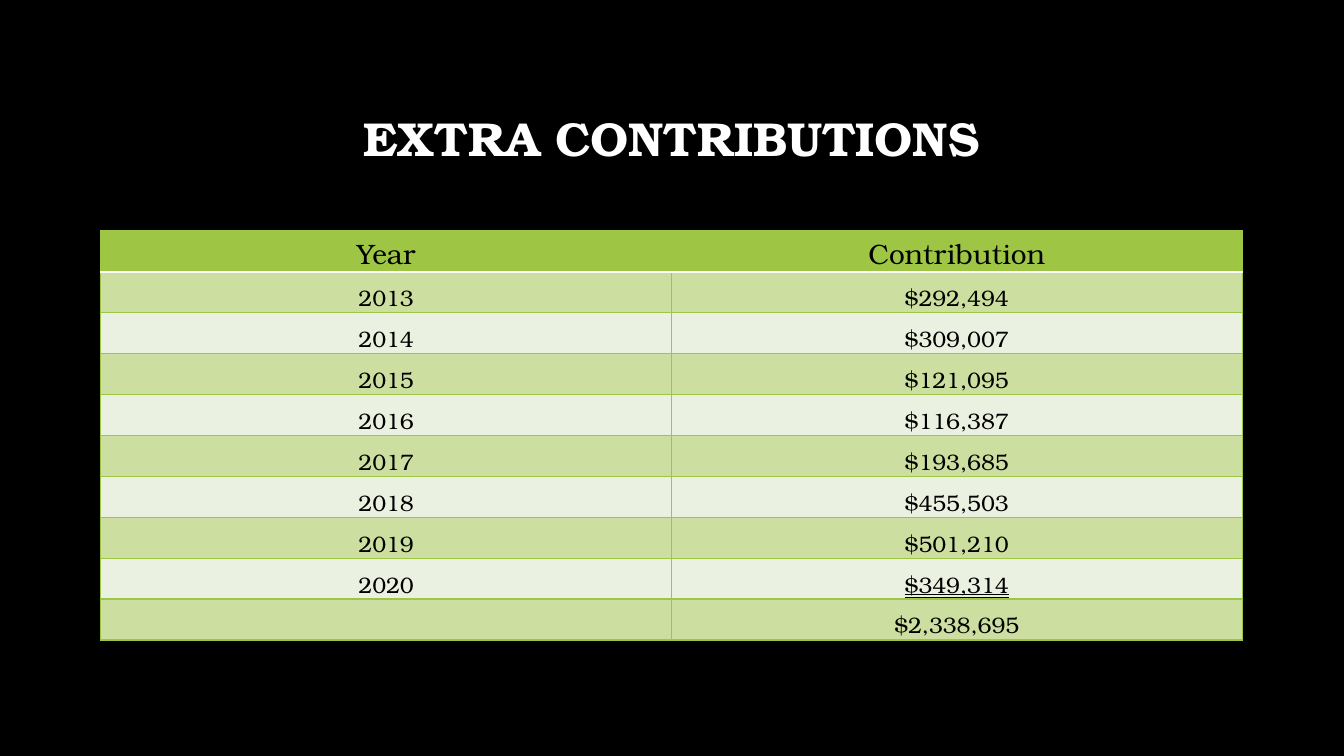
from dataclasses import dataclass

from lxml.etree import SubElement
from pptx import Presentation
from pptx.dml.color import RGBColor
from pptx.enum.text import MSO_ANCHOR as Anchor
from pptx.enum.text import MSO_AUTO_SIZE as AutoSize
from pptx.enum.text import MSO_UNDERLINE as Underline
from pptx.enum.text import PP_ALIGN as Align
from pptx.oxml.ns import qn
from pptx.util import Inches, Pt


@dataclass(frozen=True)
class Theme:
    font: str = "TeX Gyre Bonum"
    background: str = "000000"
    title: str = "FFFFFF"
    text: str = "000000"
    green: str = "9EC544"
    dark_band: str = "CCDFA0"
    light_band: str = "EBF1E0"
    header_rule: str = "FFFFFF"
    title_size: int = 34
    header_size: int = 20
    body_size: int = 16


THEME = Theme()
LEFT, WIDTH = 1, 11.32
ROW_HEIGHT = 0.406
ROWS = [
    ("Year", "Contribution"),
    ("2013", "$292,494"),
    ("2014", "$309,007"),
    ("2015", "$121,095"),
    ("2016", "$116,387"),
    ("2017", "$193,685"),
    ("2018", "$455,503"),
    ("2019", "$501,210"),
    ("2020", "$349,314"),
    ("", "$2,338,695"),
]
LAST_YEAR_ROW = len(ROWS) - 2


def format_text(frame, size, color, bold=False):
    """Centre the paragraphs and style their runs."""
    for para in frame.paragraphs:
        para.alignment = Align.CENTER
        for span in para.runs:
            span.font.name = THEME.font
            span.font.size = Pt(size)
            span.font.bold = bold
            span.font.color.rgb = RGBColor.from_string(color)


def add_title(page, text):
    box = page.shapes.title
    box.left, box.top = Inches(LEFT), Inches(0.67)
    box.width, box.height = Inches(WIDTH), Inches(1.45)
    frame = box.text_frame
    frame.text = text
    frame.auto_size = AutoSize.NONE
    frame.vertical_anchor = Anchor.MIDDLE
    frame.paragraphs[0].line_spacing = 0.9
    format_text(frame, THEME.title_size, THEME.title, bold=True)


def set_border(cell, side, color, points):
    properties = cell._tc.get_or_add_tcPr()
    line = SubElement(properties, qn(f"a:ln{side}"), w=str(Pt(points)))
    fill = SubElement(line, qn("a:solidFill"))
    SubElement(fill, qn("a:srgbClr"), val=color)


def format_cell(cell, text, row):
    # Borders come before the fill in the cell properties
    for side in "LRTB":
        under_header = (row, side) in ((0, "B"), (1, "T"))
        if under_header:
            set_border(cell, side, THEME.header_rule, 1.5)
        else:
            set_border(cell, side, THEME.green, 1)

    band = THEME.dark_band if row % 2 else THEME.light_band
    cell.fill.solid()
    cell.fill.fore_color.rgb = RGBColor.from_string(THEME.green if row == 0 else band)

    cell.margin_left = cell.margin_right = cell.margin_top = Inches(0.01)
    cell.margin_bottom = Inches(0)
    cell.vertical_anchor = Anchor.BOTTOM
    cell.text_frame.text = text
    size = THEME.header_size if row == 0 else THEME.body_size
    format_text(cell.text_frame, size, THEME.text)


def add_contribution_table(page):
    columns = len(ROWS[0])
    table = page.shapes.add_table(
        len(ROWS), columns, Inches(LEFT), Inches(2.29),
        Inches(WIDTH), Inches(ROW_HEIGHT * len(ROWS)),
    ).table
    for column in table.columns:
        column.width = Inches(WIDTH / columns)
    for row, values in enumerate(ROWS):
        table.rows[row].height = Inches(ROW_HEIGHT)
        for column, value in enumerate(values):
            format_cell(table.cell(row, column), value, row)

    # The last amount is ruled off above the total
    amount = table.cell(LAST_YEAR_ROW, 1).text_frame.paragraphs[0].runs[0]
    amount.font.underline = Underline.DOUBLE_LINE


def main():
    deck = Presentation()
    deck.slide_width, deck.slide_height = Inches(13.33), Inches(7.5)
    page = deck.slides.add_slide(deck.slide_layouts[5])
    page.background.fill.solid()
    page.background.fill.fore_color.rgb = RGBColor.from_string(THEME.background)
    add_title(page, "EXTRA CONTRIBUTIONS")
    add_contribution_table(page)
    deck.save("out.pptx")


if __name__ == "__main__":
    main()
